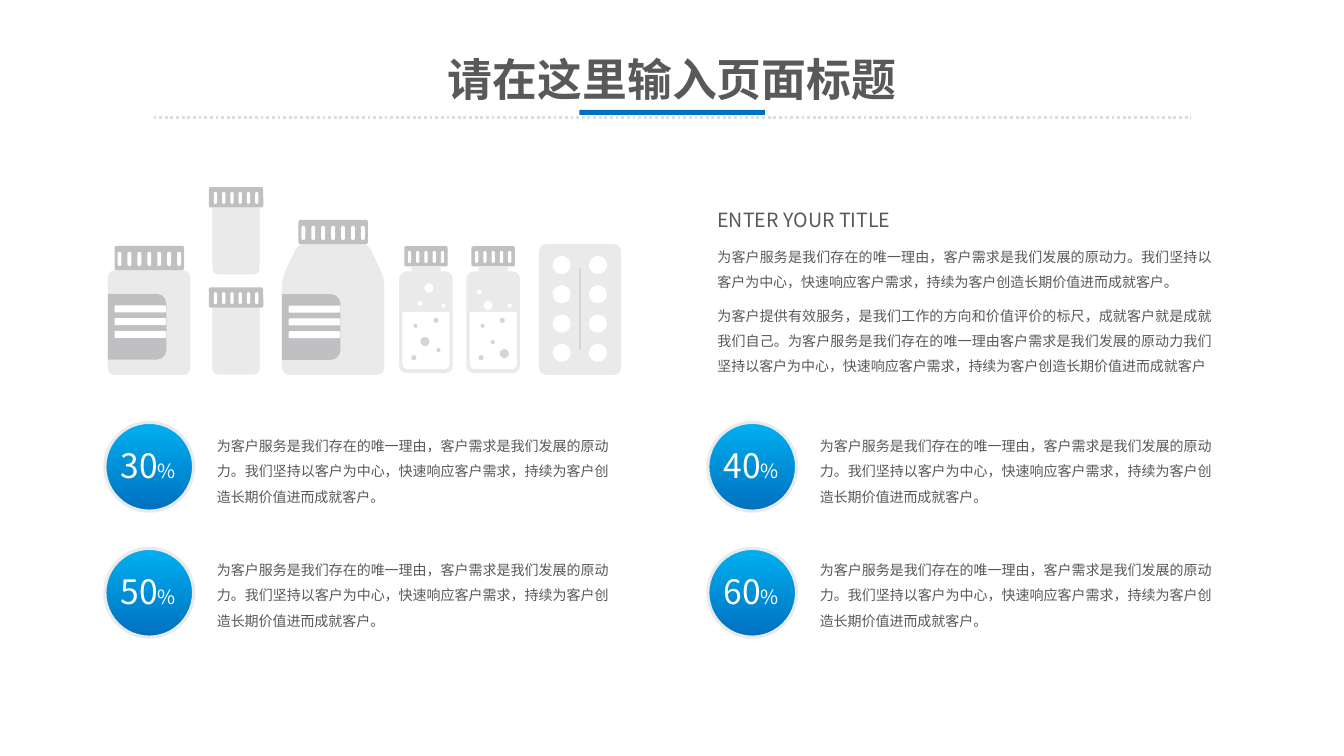
from lxml import etree
from pptx import Presentation
from pptx.dml.color import RGBColor
from pptx.enum import dml, lang, shapes, text
from pptx.oxml.ns import qn
from pptx.util import Pt

FONT = "Noto Sans CJK JP"
DARK, WHITE, BLUE = "595959", "FFFFFF", "0070C0"
PALE, CAP, SPOT = "EAEAEB", "C0C0C3", "D5D5D7"
KIND = shapes.MSO_SHAPE
ALIGN = text.PP_ALIGN
SERVICE = ("为客户服务是我们存在的唯一理由，客户需求是我们发展的原动力。我们坚持以"
           "客户为中心，快速响应客户需求，持续为客户创造长期价值进而成就客户。")
VALUE = ("为客户提供有效服务，是我们工作的方向和价值评价的标尺，成就客户就是成就"
         "我们自己。为客户服务是我们存在的唯一理由客户需求是我们发展的原动力我们"
         "坚持以客户为中心，快速响应客户需求，持续为客户创造长期价值进而成就客户")


def rgb(color):
    return RGBColor.from_string(color)


def paint(sp, color):
    sp.shadow.inherit = False
    sp.fill.solid()
    sp.fill.fore_color.rgb = rgb(color)
    sp.line.fill.background()


def part(box, kind, x, y, w, h, color, adj=(), rot=0):
    sp = box.shapes.add_shape(kind, Pt(x), Pt(y), Pt(w), Pt(h))
    paint(sp, color)
    for i, value in enumerate(adj):
        sp.adjustments[i] = value
    sp.rotation = rot
    return sp


def rule(box, x1, y1, x2, y2, color, width, dash=None):
    ln = box.shapes.add_connector(shapes.MSO_CONNECTOR.STRAIGHT,
                                  Pt(x1), Pt(y1), Pt(x2), Pt(y2))
    ln.line.color.rgb = rgb(color)
    ln.line.width = Pt(width)
    if dash:
        ln.line.dash_style = dash
    etree.SubElement(ln._element.spPr, qn("a:effectLst"))


def add_run(p, words, size, color=DARK, font=FONT, bold=False):
    r = p.add_run()
    r.text = words
    r.font.name, r.font.size, r.font.bold = font, Pt(size), bold
    r.font.color.rgb = rgb(color)
    r.font.language_id = lang.MSO_LANGUAGE_ID.SIMPLIFIED_CHINESE
    etree.SubElement(r._r.get_or_add_rPr(), qn("a:ea")).set("typeface", FONT)


def text_box(box, x, y, w, h, wrap=True):
    tf = box.shapes.add_textbox(Pt(x), Pt(y), Pt(w), Pt(h)).text_frame
    tf.word_wrap = wrap
    tf.auto_size = text.MSO_AUTO_SIZE.SHAPE_TO_FIT_TEXT
    return tf


def write_paragraphs(tf, items):
    for i, (words, size) in enumerate(items):
        p = tf.add_paragraph() if i else tf.paragraphs[0]
        p.alignment, p.line_spacing, p.space_after = ALIGN.JUSTIFY, 1.5, Pt(6)
        add_run(p, words, size)


def header(s, x, y, w, h):
    sp = s.shapes.title
    sp.left, sp.top, sp.width, sp.height = Pt(x), Pt(y), Pt(w), Pt(h)
    tf = sp.text_frame
    tf.margin_left = tf.margin_right = tf.margin_top = tf.margin_bottom = Pt(1.44)
    tf.vertical_anchor = text.MSO_ANCHOR.MIDDLE
    tf.auto_size = text.MSO_AUTO_SIZE.NONE
    p = tf.paragraphs[0]
    p.alignment, p.line_spacing = ALIGN.CENTER, 1.0
    add_run(p, "请在这里输入页面标题", 32, font="Arial", bold=True)
    rule(s, x - 125, y + 44.6, x + w + 125, y + 44.6, "DCDEE0", 2,
         dml.MSO_LINE.ROUND_DOT)
    part(s, KIND.RECTANGLE, x + w / 2 - 66.25, y + 38.9, 132.5, 3.6, BLUE)


def cap(g, x, y, w, h, slots):
    part(g, KIND.ROUNDED_RECTANGLE, x, y, w, h, CAP, [0.087])
    pitch, slot_w = 0.41 * h, 0.16 * h
    first = x + (w - pitch * (slots - 1) - slot_w) / 2
    for i in range(slots):
        part(g, KIND.ROUNDED_RECTANGLE, first + pitch * i, y + 0.24 * h,
             slot_w, 0.59 * h, WHITE, [0.5])


def label(g, x, y):
    # Quarter turn: the unrotated frame is 47 wide and 41.8 high
    part(g, KIND.ROUND_2_SAME_RECTANGLE, x - 2.6 + 0.0, y + 2.6, 47, 41.8, CAP,
         rot=90).left = Pt(x + 20.9 - 23.5)
    for i in range(3):
        part(g, KIND.ROUNDED_RECTANGLE, x + 4.8, y + 8.3 + 9.1 * i, 36.7, 5, WHITE)


def jar(s, x, y):
    g = s.shapes.add_group_shape()
    part(g, KIND.ROUNDED_RECTANGLE, x, y + 17.3, 59, 75, PALE, [0.087])
    cap(g, x + 4.8, y, 49.7, 17.3, 7)
    label(g, x, y + 34.2)


def bottle(s, x, y):
    g = s.shapes.add_group_shape()
    # Corner x, corner y, rounding length, clockwise from the neck
    corners = [(11.7, 0, 4.5), (61.4, 0, 4.5), (73.1, 24, 7), (73.1, 93.6, 7),
               (0, 93.6, 7), (0, 24, 7)]
    points = []
    for i, (cx, cy, size) in enumerate(corners):
        ends = []
        for nx, ny, _ in (corners[i - 1], corners[(i + 1) % len(corners)]):
            k = size / ((nx - cx) ** 2 + (ny - cy) ** 2) ** 0.5
            ends.append((cx + k * (nx - cx), cy + k * (ny - cy)))
        (ax, ay), (bx, by) = ends
        for t in (0, 0.2, 0.4, 0.6, 0.8, 1):
            a, c, b = (1 - t) ** 2, 2 * t * (1 - t), t * t
            points.append((Pt(x + a * ax + c * cx + b * bx),
                           Pt(y + 17.3 + a * ay + c * cy + b * by)))
    fb = g.shapes.build_freeform(*points[0])
    fb.add_line_segments(points[1:], close=True)
    paint(fb.convert_to_shape(), PALE)
    cap(g, x + 11.7, y, 49.7, 17.3, 7)
    label(g, x, y + 53)


def tube(s, x, y):
    g = s.shapes.add_group_shape()
    part(g, KIND.ROUND_2_SAME_RECTANGLE, x + 2.5, y + 14.4, 33.8, 47.8, PALE,
         [0.116, 0], 180)
    cap(g, x, y, 38.9, 14.4, 6)


def vial(s, x, y, bubbles, specks):
    g = s.shapes.add_group_shape()
    part(g, KIND.ROUNDED_RECTANGLE, x, y + 18, 38.2, 72.7, PALE, [0.137])
    cap(g, x + 3.6, y, 31, 14.4, 5)
    part(g, KIND.RECTANGLE, x + 8.6, y + 14.4, 21, 3.6, PALE)
    part(g, KIND.ROUND_2_SAME_RECTANGLE, x + 2.2, y + 46.8, 33.8, 41, WHITE,
         [0.116, 0], 180)
    for color, dots in ((WHITE, bubbles), (SPOT, specks)):
        for dx, dy, d in dots:
            part(g, KIND.OVAL, x + dx, y + dy, d, d, color)


def blister(s, x, y):
    g = s.shapes.add_group_shape()
    part(g, KIND.ROUNDED_RECTANGLE, x, y, 58.7, 93.6, PALE, [0.09])
    for col in range(2):
        for row in range(4):
            part(g, KIND.OVAL, x + 9.7 + 25.9 * col, y + 8.6 + 20.9 * row,
                 13, 13, WHITE)
    rule(g, x + 29.4, y + 17.3, x + 29.4, y + 75.7, SPOT, 1.5)


def medicine_shelf(s, x, y):
    jar(s, x, y + 42)
    for top in (0, 71.6):
        tube(s, x + 72.2, y + top)
    bottle(s, x + 124.4, y + 23.4)
    vial(s, x + 208.2, y + 42.2,
         [(18, 26.6, 6.5), (13, 38.9, 3.6), (30.2, 41, 2.9)],
         [(15.1, 64.8, 6.5), (8.6, 77.8, 3.6), (10.1, 55.4, 2.9),
          (24.5, 51.1, 3.6), (26.6, 72.7, 2.9)])
    vial(s, x + 256.2, y + 42.2,
         [(12.2, 38.9, 6.5), (7.2, 31, 3.6), (29.5, 41, 2.9)],
         [(23.8, 73.4, 6.5), (8.6, 77.8, 3.6), (10.1, 55.4, 2.9),
          (23.8, 51.1, 3.6), (17.3, 67, 2.9)])
    blister(s, x + 308, y + 40.5)


def stat(s, x, y, number, text_dy):
    g = s.shapes.add_group_shape()
    tf = text_box(g, x + 72.9, y + text_dy, 293.8, 59)
    write_paragraphs(tf, [(SERVICE, 10)])
    disc = part(g, KIND.OVAL, x, y, 63.4, 63.4, BLUE)
    disc.fill.gradient()
    disc.fill.gradient_angle = 270
    for stop, color, at in zip(disc.fill.gradient_stops, ("00B0F0", BLUE), (0, 1)):
        stop.color.rgb, stop.position = rgb(color), at
    disc.line.color.rgb = rgb(PALE)
    disc.line.width = Pt(2.25)
    p = text_box(g, x + 2.9, y + 12.2, 56.2, 36, wrap=False).paragraphs[0]
    p.alignment = ALIGN.CENTER
    add_run(p, number, 24, WHITE)
    add_run(p, "%", 14, WHITE)


def main():
    prs = Presentation()
    prs.slide_width, prs.slide_height = Pt(960), Pt(540)
    s = prs.slides.add_slide(prs.slide_layouts[5])
    header(s, 234.7, 39.6, 491, 33.1)
    medicine_shelf(s, 77, 133.7)
    # Introduction
    tf = text_box(s, 505.4, 136.8, 367.2, 135.4)
    write_paragraphs(tf, [("ENTER YOUR TITLE", 14), (SERVICE, 10), (VALUE, 10)])
    # Percentages, two by two
    for row, (numbers, text_dy) in enumerate(((("30", "40"), 1.4),
                                              (("50", "60"), 0))):
        for col, number in enumerate(numbers):
            stat(s, 74.9 + 430.7 * col, 301.7 + 90 * row, number, text_dy)
    prs.save("out.pptx")


if __name__ == "__main__":
    main()
